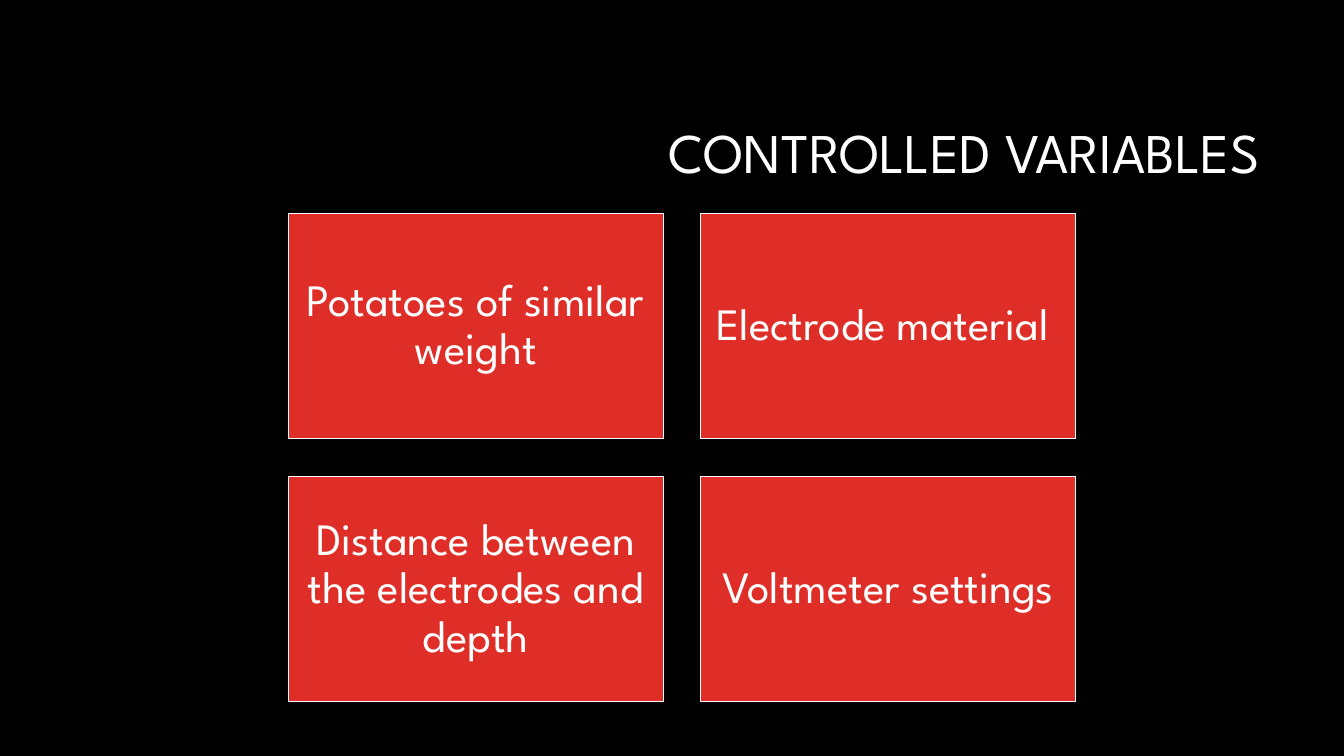
"""Build a slide listing the controlled variables as a two-by-two grid of cards."""
from pptx import Presentation
from pptx import util as u
from pptx.dml.color import RGBColor
from pptx.enum import shapes, text

THEME = {
    "back": RGBColor.from_string("000000"),
    "card": RGBColor.from_string("DF2E28"),
    "ink": RGBColor.from_string("FFFFFF"),
    "font": "League Spartan",
    "title": u.Pt(40),
    "body": u.Pt(32),
}
LEFT, TOP = 2.86, 2.12
CARD_W, CARD_H = 3.72, 2.23
STEP_X, STEP_Y = 4.09, 2.61
VARIABLES = [
    "Potatoes of similar weight",
    "Electrode material ",
    "Distance between the electrodes and depth",
    "Voltmeter settings",
]


def write(sp, words, size, align, inset):
    """Put one formatted paragraph in a shape, centred vertically."""
    tf = sp.text_frame
    frame = {"word_wrap": True, "auto_size": text.MSO_AUTO_SIZE.NONE,
             "vertical_anchor": text.MSO_ANCHOR.MIDDLE}
    frame.update({f"margin_{side}": u.Inches(inset[side]) for side in inset})
    for name, value in frame.items():
        setattr(tf, name, value)
    p = tf.paragraphs[0]
    p.alignment, p.line_spacing = align, 0.9
    r = p.add_run()
    r.text = words
    for name, value in {"name": THEME["font"], "size": size}.items():
        setattr(r.font, name, value)
    r.font.color.rgb = THEME["ink"]


prs = Presentation()
prs.slide_width, prs.slide_height = u.Inches(13.33), u.Inches(7.5)
s = prs.slides.add_slide(prs.slide_layouts[5])
s.background.fill.solid()
s.background.fill.fore_color.rgb = THEME["back"]

title = s.shapes.title
for name, value in {"left": 3.17, "top": 0.84, "width": 9.42, "height": 1.41}.items():
    setattr(title, name, u.Inches(value))
write(title, "CONTROLLED VARIABLES", THEME["title"], text.PP_ALIGN.RIGHT, {})

for i, variable in enumerate(VARIABLES):
    row, col = divmod(i, 2)
    sp = s.shapes.add_shape(
        shapes.MSO_SHAPE.RECTANGLE,
        u.Inches(LEFT + col * STEP_X), u.Inches(TOP + row * STEP_Y),
        u.Inches(CARD_W), u.Inches(CARD_H))
    sp.shadow.inherit = False
    sp.fill.solid()
    sp.fill.fore_color.rgb = THEME["card"]
    sp.line.color.rgb = THEME["ink"]
    sp.line.width = u.Pt(1)
    write(sp, variable, THEME["body"], text.PP_ALIGN.CENTER,
          dict.fromkeys(("left", "top", "right", "bottom"), 0.13))

prs.save("out.pptx")
